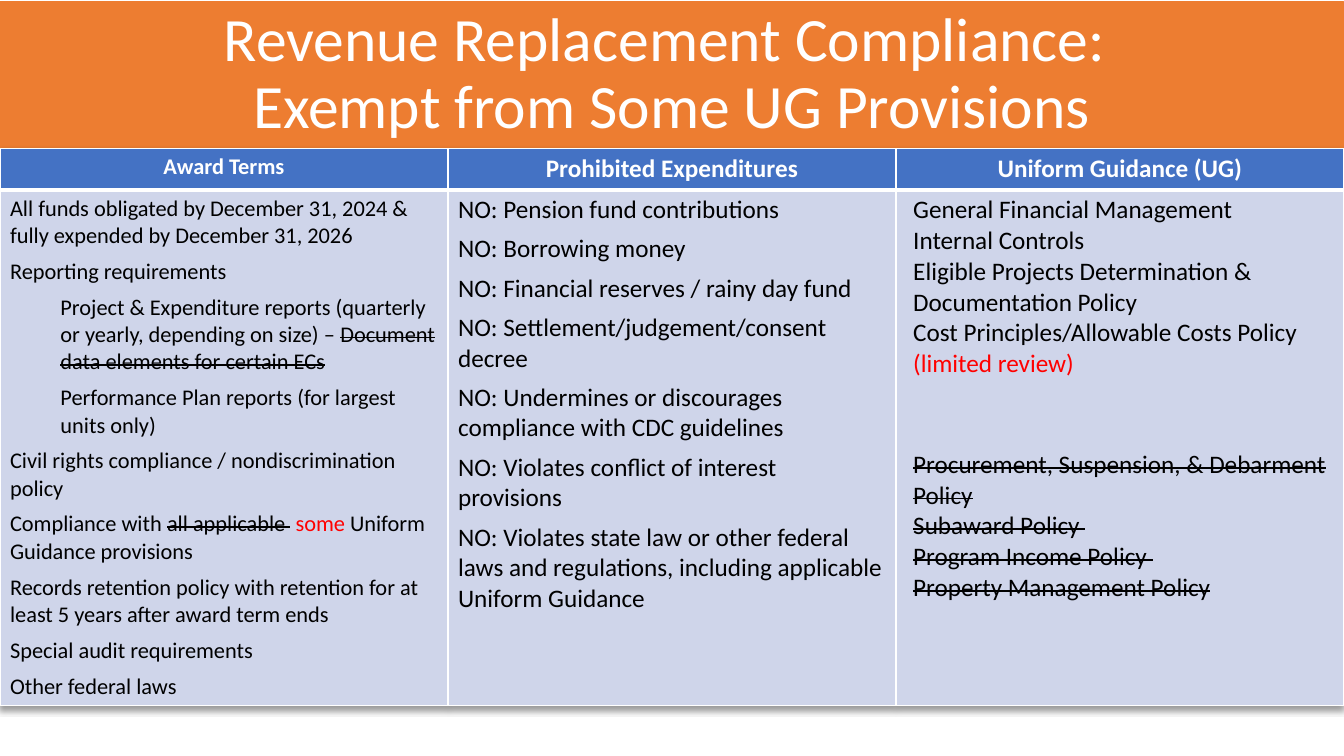
from dataclasses import dataclass

from lxml.etree import SubElement
from pptx import Presentation
from pptx.dml.color import RGBColor
from pptx.enum.text import MSO_ANCHOR, MSO_AUTO_SIZE, PP_ALIGN
from pptx.oxml import parse_xml
from pptx.oxml.ns import nsdecls, qn
from pptx.slide import Slide
from pptx.table import Table, _Cell
from pptx.text.text import _Paragraph
from pptx.util import Cm, Pt

COLORS = {
    "banner": "ED7D31",
    "header": "4472C4",
    "body": "CFD5EA",
    "white": "FFFFFF",
    "text": "000000",
    "change": "FF0000",
}
FONT = "Calibri"
SLIDE_WIDTH, SLIDE_HEIGHT = Cm(33.87), Cm(19.05)
BANNER_TOP, BANNER_HEIGHT = Cm(0.05), Cm(3.69)
TABLE_TOP = Cm(3.74)
HEADER_HEIGHT, BODY_HEIGHT = Cm(1.04), Cm(12.07)
TITLE_LINES = ("Revenue Replacement Compliance: ", "Exempt from Some UG Provisions")


@dataclass(frozen=True)
class Phrase:
    text: str
    color: str = "text"
    strike: bool = False


@dataclass(frozen=True)
class Entry:
    phrases: tuple[Phrase, ...]
    indent: float = 0
    before: float = 6


@dataclass(frozen=True)
class Topic:
    heading: str
    heading_size: int
    body_size: int
    entries: tuple[Entry, ...]


def plain(text: str, indent: float = 0, before: float = 6) -> Entry:
    return Entry((Phrase(text),), indent, before)


def guidance(*phrases: Phrase, before: float = 0) -> Entry:
    return Entry(phrases, 0.18, before)


TOPICS = (
    Topic("Award Terms", 16, 16, (
        plain("All funds obligated by December 31, 2024 & fully expended by December 31, 2026", before=0),
        plain("Reporting requirements"),
        Entry((
            Phrase("Project & Expenditure reports (quarterly or yearly, depending on size) – "),
            Phrase("Document data elements for certain ECs", strike=True),
        ), 1.27),
        plain("Performance Plan reports (for largest units only)", 1.27),
        plain("Civil rights compliance / nondiscrimination policy"),
        Entry((
            Phrase("Compliance with "),
            Phrase("all applicable ", strike=True),
            Phrase(" "),
            Phrase("some", "change"),
            Phrase(" Uniform Guidance provisions"),
        )),
        plain("Records retention policy with retention for at least 5 years after award term ends"),
        plain("Special audit requirements"),
        plain("Other federal laws"),
    )),
    Topic("Prohibited Expenditures", 18, 18, (
        plain("NO: Pension fund contributions", before=0),
        plain("NO: Borrowing money"),
        plain("NO: Financial reserves / rainy day fund"),
        plain("NO: Settlement/judgement/consent decree"),
        plain("NO: Undermines or discourages compliance with CDC guidelines"),
        plain("NO: Violates conflict of interest provisions"),
        plain("NO: Violates state law or other federal laws and regulations, "
              "including applicable Uniform Guidance"),
    )),
    Topic("Uniform Guidance (UG)", 18, 18, (
        guidance(Phrase("General Financial Management")),
        guidance(Phrase("Internal Controls")),
        guidance(Phrase("Eligible Projects Determination & Documentation Policy")),
        guidance(Phrase("Cost Principles/Allowable Costs Policy  "), Phrase("(limited review)", "change")),
        guidance(Phrase("Procurement, Suspension, & Debarment Policy", strike=True), before=50),
        guidance(Phrase("Subaward Policy ", strike=True)),
        guidance(Phrase("Program Income Policy ", strike=True)),
        guidance(Phrase("Property Management Policy", strike=True)),
    )),
)


def rgb(color: str) -> RGBColor:
    return RGBColor.from_string(COLORS[color])


def add_text(paragraph: _Paragraph, text: str, *, size: float, color: str = "text",
             bold: bool = False, strike: bool = False) -> None:
    run = paragraph.add_run()
    run.text = text
    run.font.name = FONT
    run.font.size = Pt(size)
    run.font.bold = bold
    run.font.color.rgb = rgb(color)
    if strike:
        run._r.get_or_add_rPr().set("strike", "sngStrike")


def style_cell(cell: _Cell, fill: str, top: float, bottom: float) -> None:
    properties = cell._tc.get_or_add_tcPr()
    for side, width in (("L", 1), ("R", 1), ("T", top), ("B", bottom)):
        border = SubElement(properties, qn(f"a:ln{side}"), w=str(Pt(width)))
        SubElement(SubElement(border, qn("a:solidFill")), qn("a:srgbClr"), val=COLORS["white"])
    cell.fill.solid()
    cell.fill.fore_color.rgb = rgb(fill)


def draw_banner(slide: Slide) -> None:
    banner = slide.shapes.title
    banner.left, banner.top = 0, BANNER_TOP
    banner.width, banner.height = SLIDE_WIDTH, BANNER_HEIGHT
    banner.fill.solid()
    banner.fill.fore_color.rgb = rgb("banner")
    banner.line.color.rgb = rgb("banner")
    banner.line.width = Pt(0.75)
    frame = banner.text_frame
    frame.word_wrap = True
    frame.auto_size = MSO_AUTO_SIZE.NONE
    frame.vertical_anchor = MSO_ANCHOR.MIDDLE
    heading = frame.paragraphs[0]
    heading.alignment = PP_ALIGN.CENTER
    heading.line_spacing = 0.9
    for index, line in enumerate(TITLE_LINES):
        if index:
            heading.add_line_break()
        add_text(heading, line, size=44, color="white")


def draw_topic(table: Table, column: int, topic: Topic) -> None:
    header, body = table.cell(0, column), table.cell(1, column)
    style_cell(header, "header", top=1, bottom=3)
    style_cell(body, "body", top=3, bottom=1)
    heading = header.text_frame.paragraphs[0]
    heading.alignment = PP_ALIGN.CENTER
    add_text(heading, topic.heading, size=topic.heading_size, color="white", bold=True)
    frame = body.text_frame
    for index, entry in enumerate(topic.entries):
        paragraph = frame.add_paragraph() if index else frame.paragraphs[0]
        if entry.indent:
            paragraph._p.get_or_add_pPr().set("marL", str(Cm(entry.indent)))
        if index:
            paragraph.space_before = Pt(entry.before)
        for phrase in entry.phrases:
            add_text(paragraph, phrase.text, size=topic.body_size, color=phrase.color, strike=phrase.strike)


def draw_table(slide: Slide) -> None:
    table = slide.shapes.add_table(
        2, len(TOPICS), 0, TABLE_TOP, SLIDE_WIDTH, HEADER_HEIGHT + BODY_HEIGHT).table
    table.rows[0].height, table.rows[1].height = HEADER_HEIGHT, BODY_HEIGHT
    shadow = parse_xml(
        f'<a:effectLst {nsdecls("a")}><a:outerShdw blurRad="50800" dist="38100" dir="5400000" '
        f'algn="t" rotWithShape="0"><a:srgbClr val="{COLORS["text"]}"><a:alpha val="40000"/>'
        '</a:srgbClr></a:outerShdw></a:effectLst>')
    table._tbl.tblPr.insert(0, shadow)
    for column, topic in enumerate(TOPICS):
        draw_topic(table, column, topic)


def main() -> None:
    presentation = Presentation()
    presentation.slide_width, presentation.slide_height = SLIDE_WIDTH, SLIDE_HEIGHT
    slide = presentation.slides.add_slide(presentation.slide_layouts[5])
    draw_banner(slide)
    draw_table(slide)
    presentation.save("out.pptx")


if __name__ == "__main__":
    main()
